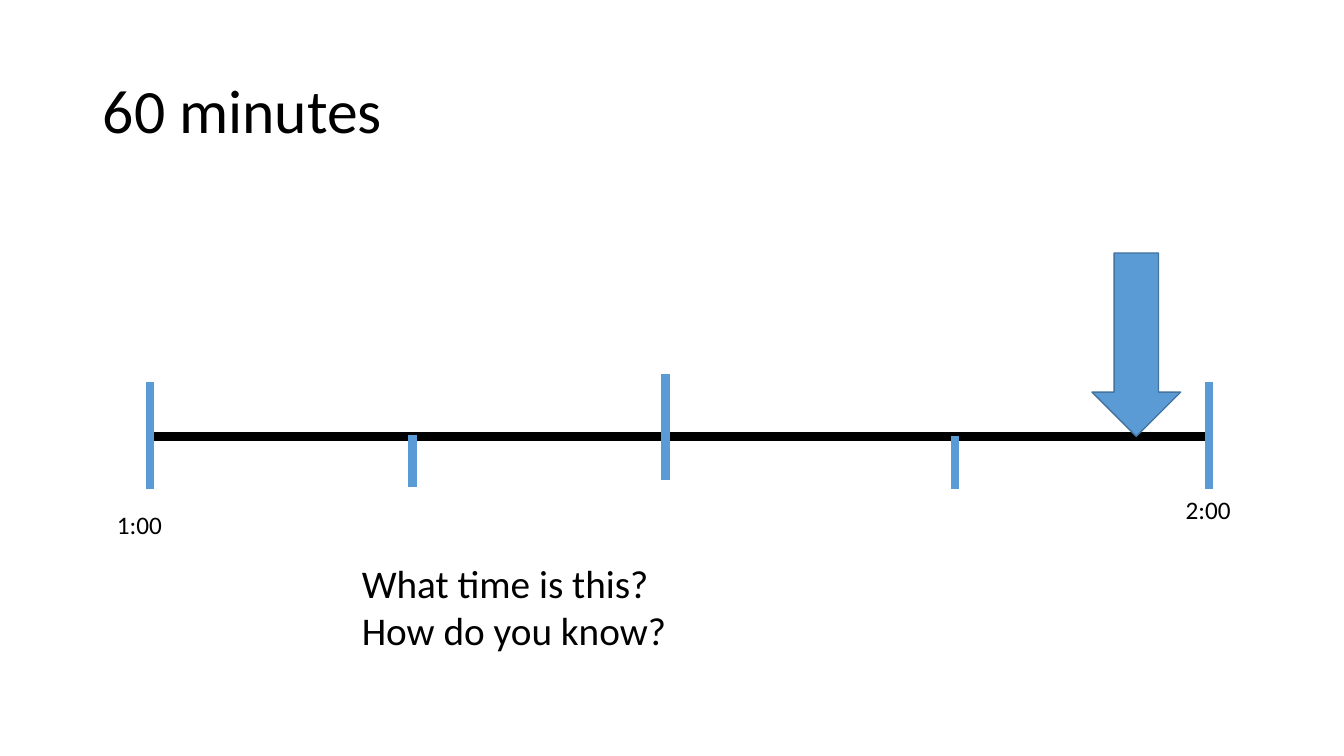
from typing import NamedTuple

from lxml import etree
from pptx import Presentation
from pptx.dml.color import RGBColor
from pptx.enum.shapes import MSO_CONNECTOR, MSO_SHAPE
from pptx.enum.text import MSO_ANCHOR, MSO_AUTO_SIZE
from pptx.oxml.ns import qn
from pptx.slide import Slide
from pptx.text.text import TextFrame
from pptx.util import Inches, Pt

STRAIGHT = MSO_CONNECTOR.STRAIGHT
DOWN_ARROW = MSO_SHAPE.DOWN_ARROW
MIDDLE = MSO_ANCHOR.MIDDLE
FIT_SHAPE = MSO_AUTO_SIZE.SHAPE_TO_FIT_TEXT

FONT = "Calibri"
BLACK = "000000"
BLUE = "5B9BD5"
DARK_BLUE = "43739E"
LINE_WIDTH = 6
TITLE_ONLY = 5


class Line(NamedTuple):
    x1: float
    y1: float
    x2: float
    y2: float
    color: str


class Label(NamedTuple):
    text: str
    left: float
    top: float
    width: float
    height: float
    size: int
    wrap: bool


def tick(x: float, top: float, bottom: float) -> Line:
    return Line(x, top, x, bottom, BLUE)


LINES = [
    Line(1.49, 4.33, 12.03, 4.33, BLACK),
    tick(1.49, 3.79, 4.85),
    tick(4.09, 4.32, 4.83),
    tick(6.6, 3.71, 4.76),
    tick(9.47, 4.33, 4.85),
    tick(11.99, 3.79, 4.85),
]

LABELS = [
    Label("What time is this?\nHow do you know?", 3.49, 5.5, 5.12, 1.04, 28, True),
    Label("1:00", 1.06, 5, 0.65, 0.4, 18, False),
    Label("2:00", 11.66, 4.85, 0.65, 0.4, 18, False),
]


def rgb(color: str) -> RGBColor:
    return RGBColor.from_string(color)


def set_text(tf: TextFrame, text: str, size: int) -> None:
    tf.text = text
    for p in tf.paragraphs:
        for r in p.runs:
            r.font.name = FONT
            r.font.size = Pt(size)
            r.font.color.rgb = rgb(BLACK)


def add_title(slide: Slide, text: str) -> None:
    sp = slide.shapes.title
    sp.left, sp.top = Inches(0.92), Inches(0.4)
    sp.width, sp.height = Inches(11.5), Inches(1.45)
    tf = sp.text_frame
    set_text(tf, text, 44)
    tf.vertical_anchor = MIDDLE
    p = tf.paragraphs[0]
    p.alignment = 1
    p.line_spacing = 0.9


def add_line(slide: Slide, line: Line) -> None:
    sp = slide.shapes.add_connector(
        STRAIGHT, Inches(line.x1), Inches(line.y1), Inches(line.x2), Inches(line.y2)
    )
    sp.line.color.rgb = rgb(line.color)
    sp.line.width = Pt(LINE_WIDTH)
    etree.SubElement(sp._element.spPr, qn("a:effectLst"))


def add_arrow(slide: Slide) -> None:
    sp = slide.shapes.add_shape(
        DOWN_ARROW, Inches(10.83), Inches(2.51), Inches(0.88), Inches(1.82)
    )
    sp.shadow.inherit = False
    sp.fill.solid()
    sp.fill.fore_color.rgb = rgb(BLUE)
    sp.line.color.rgb = rgb(DARK_BLUE)
    sp.line.width = Pt(1)


def add_label(slide: Slide, label: Label) -> None:
    sp = slide.shapes.add_textbox(
        Inches(label.left), Inches(label.top), Inches(label.width), Inches(label.height)
    )
    tf = sp.text_frame
    tf.word_wrap = label.wrap
    tf.auto_size = FIT_SHAPE
    set_text(tf, label.text, label.size)


def main() -> None:
    prs = Presentation()
    prs.slide_width, prs.slide_height = Inches(13.33), Inches(7.5)
    slide = prs.slides.add_slide(prs.slide_layouts[TITLE_ONLY])
    add_title(slide, "60 minutes")
    for line in LINES:
        add_line(slide, line)
    add_arrow(slide)
    for label in LABELS:
        add_label(slide, label)
    prs.save("out.pptx")


if __name__ == "__main__":
    main()
